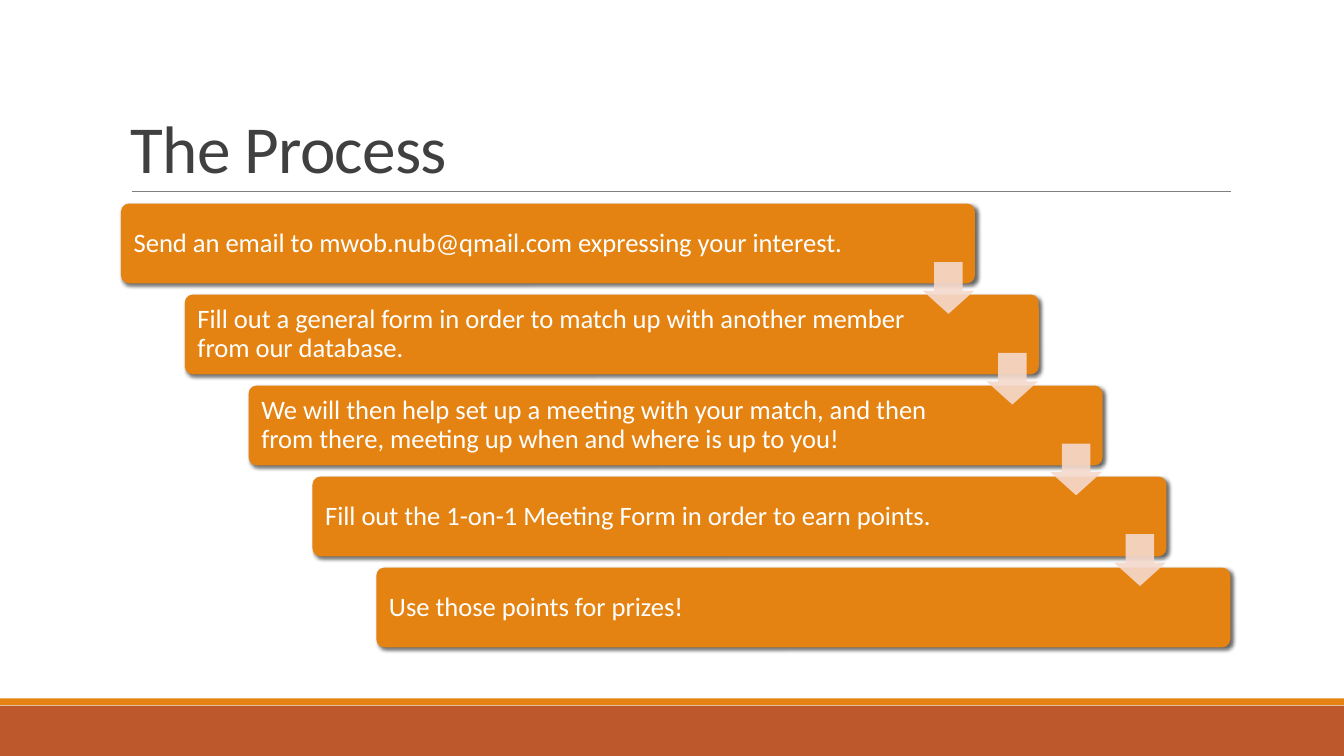
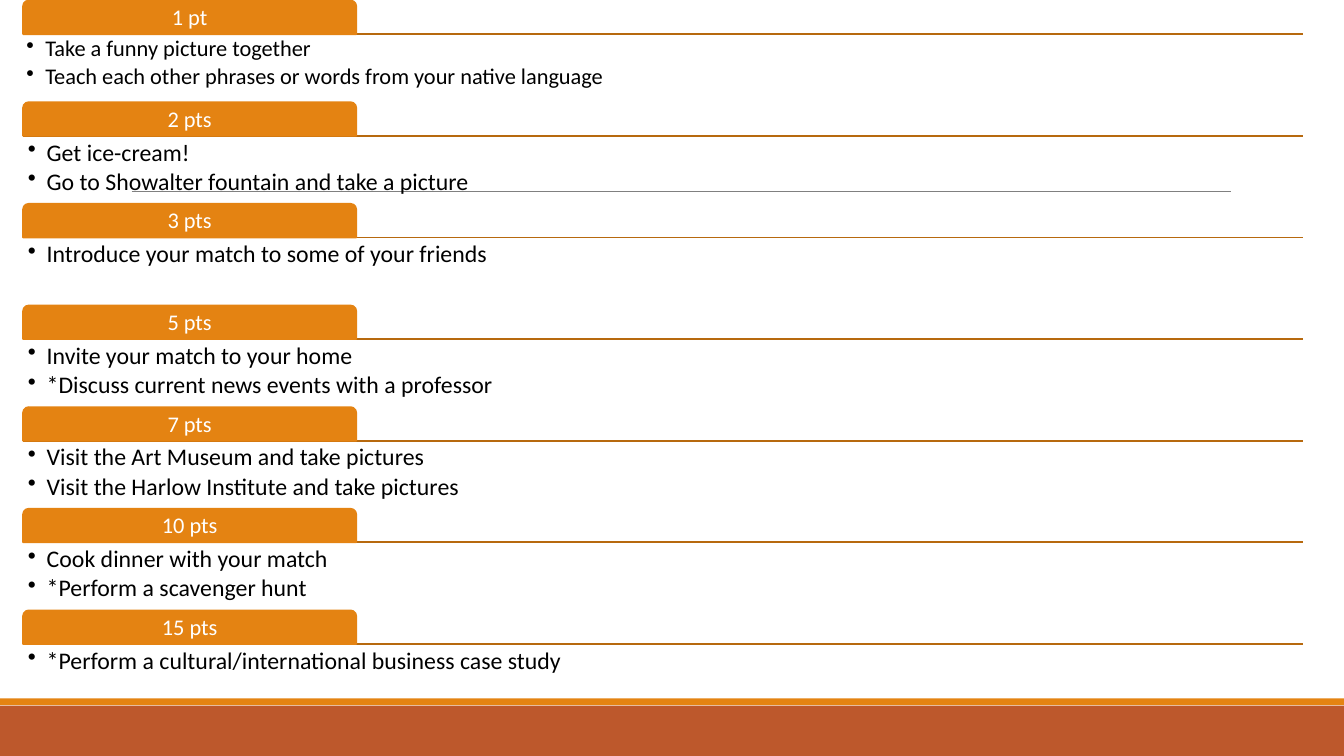
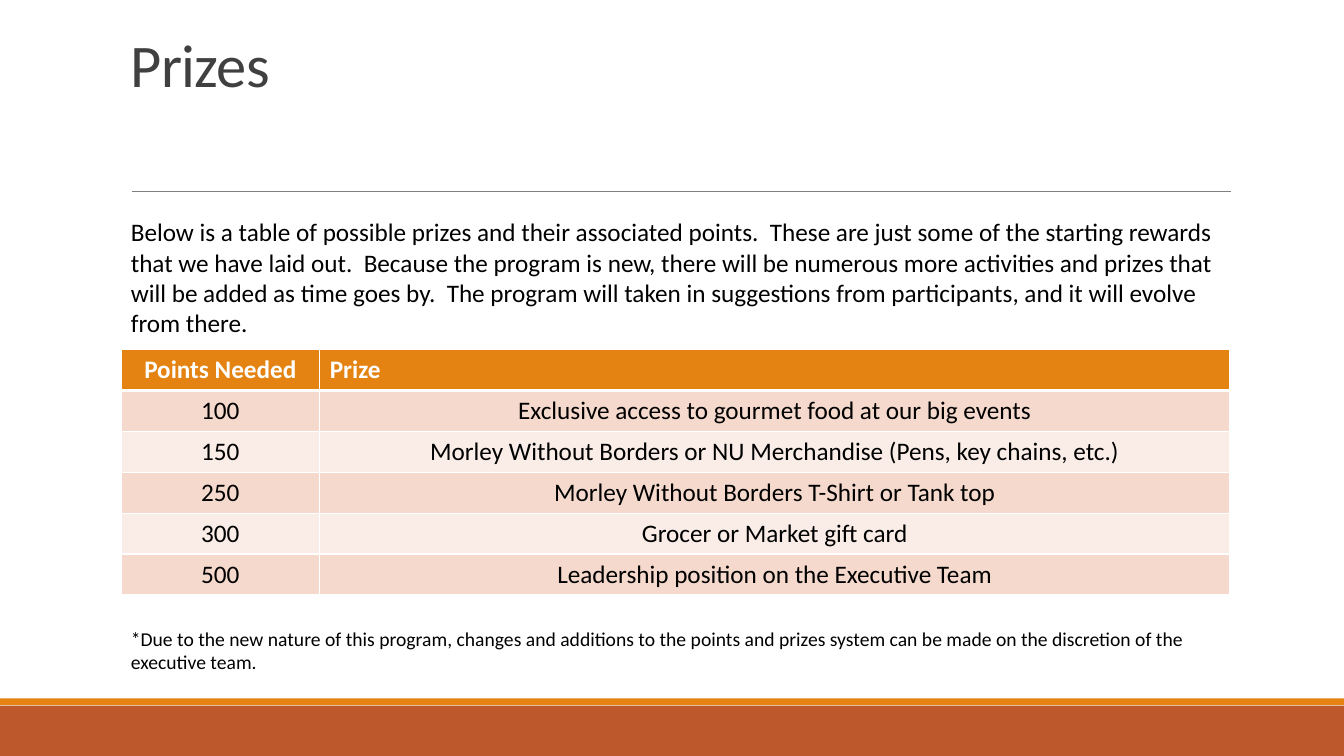
from lxml.etree import SubElement
from pptx import Presentation
from pptx.dml.color import RGBColor
from pptx.enum.shapes import MSO_CONNECTOR, MSO_SHAPE as SHAPE
from pptx.enum.text import MSO_ANCHOR as ANCHOR, PP_ALIGN as ALIGN
from pptx.oxml import parse_xml
from pptx.oxml.ns import nsdecls, qn
from pptx.util import Pt

ORANGE = RGBColor(0xE4, 0x83, 0x12)
RUST = RGBColor(0xBD, 0x58, 0x2C)
BROWN = RGBColor(0xB7, 0x69, 0x0E)
PEACH = RGBColor(0xF5, 0xD9, 0xCC)
PALE = RGBColor(0xFA, 0xED, 0xE7)
GRAY = RGBColor(0x80, 0x80, 0x80)
CHARCOAL = RGBColor(0x40, 0x40, 0x40)
BLACK = RGBColor(0, 0, 0)
WHITE = RGBColor(0xFF, 0xFF, 0xFF)
FONT = "Calibri"
MARGIN, CONTENT_WIDTH = 86.4, 792

STEPS = [
    "Send an email to mwob.nub@qmail.com expressing your interest.",
    "Fill out a general form in order to match up with another member from our database.",
    "We will then help set up a meeting with your match, and then from there, "
    "meeting up when and where is up to you!",
    "Fill out the 1-on-1 Meeting Form in order to earn points.",
    "Use those points for prizes!",
]
ACTIVITIES = [
    ("1 pt", ["Take a funny picture together",
              "Teach each other phrases or words from your native language"]),
    ("2 pts", ["Get ice-cream!", "Go to Showalter fountain and take a picture"]),
    ("3 pts", ["Introduce your match to some of your friends"]),
    ("5 pts", ["Invite your match to your home",
               "*Discuss current news events with a professor"]),
    ("7 pts", ["Visit the Art Museum and take pictures",
               "Visit the Harlow Institute and take pictures"]),
    ("10 pts", ["Cook dinner with your match", "*Perform a scavenger hunt"]),
    ("15 pts", ["*Perform a cultural/international business case study"]),
]
PRIZES = [
    ("Points Needed", "Prize"),
    ("100", "Exclusive access to gourmet food at our big events"),
    ("150", "Morley Without Borders or NU Merchandise (Pens, key chains, etc.)"),
    ("250", "Morley Without Borders T-Shirt or Tank top"),
    ("300", "Grocer or Market gift card"),
    ("500", "Leadership position on the Executive Team"),
]
INTRO = (
    "Below is a table of possible prizes and their associated points.  "
    "These are just some of the starting rewards that we have laid out.  "
    "Because the program is new, there will be numerous more activities and prizes "
    "that will be added as time goes by.  The program will taken in suggestions "
    "from participants, and it will evolve from there."
)
FOOTNOTE = (
    "*Due to the new nature of this program, changes and additions to the points and "
    "prizes system can be made on the discretion of the executive team."
)


def add_block(slide, kind, left, top, width, height, fill):
    shape = slide.shapes.add_shape(kind, Pt(left), Pt(top), Pt(width), Pt(height))
    shape.shadow.inherit = False
    shape.fill.solid()
    shape.fill.fore_color.rgb = fill
    shape.line.fill.background()
    return shape


def add_text(paragraph, text, size, color, spacing=1.0, align=ALIGN.LEFT):
    paragraph.line_spacing = spacing
    paragraph.alignment = align
    run = paragraph.add_run()
    run.text = text
    run.font.name = FONT
    run.font.size = Pt(size)
    run.font.color.rgb = color
    return run


presentation = Presentation()
presentation.slide_width, presentation.slide_height = Pt(960), Pt(540)
blank_layout = presentation.slide_layouts[6]

slides = []
for title, title_height, title_size in [("The Process", 114.5, 48), (None, 0, 0), ("Prizes", 52.6, 43.2)]:
    slide = presentation.slides.add_slide(blank_layout)
    slides.append(slide)
    add_block(slide, SHAPE.RECTANGLE, 0, 504, 960, 36, RUST)
    add_block(slide, SHAPE.RECTANGLE, 0, 498.8, 960, 4.8, ORANGE)
    rules = [(94, 136.8, 879, GRAY, 0.5)]
    if title is None:
        rules += [(16.5, 24.4 + 72.6 * row, 930.5, BROWN, 1.25) for row in range(len(ACTIVITIES))]
    for left, top, right, color, weight in rules:
        rule = slide.shapes.add_connector(MSO_CONNECTOR.STRAIGHT, Pt(left), Pt(top), Pt(right), Pt(top))
        rule.line.color.rgb = color
        rule.line.width = Pt(weight)
        SubElement(rule._element.spPr, qn("a:effectLst"))
    if title:
        title_box = slide.shapes.add_textbox(Pt(MARGIN), Pt(22.5), Pt(CONTENT_WIDTH), Pt(title_height))
        frame = title_box.text_frame
        frame.word_wrap = True
        frame.vertical_anchor = ANCHOR.BOTTOM
        run = add_text(frame.paragraphs[0], title, title_size, CHARCOAL, 0.85)
        run.font._element.set("spc", "-50")
process_slide, points_slide, prizes_slide = slides

for index, step in enumerate(STEPS):
    box = add_block(process_slide, SHAPE.ROUNDED_RECTANGLE,
                    MARGIN + 45.6 * index, 145.4 + 65 * index, 610, 57, ORANGE)
    box.adjustments[0] = 0.1
    box._element.spPr.find(qn("a:effectLst")).append(parse_xml(
        f'<a:outerShdw {nsdecls("a")} blurRad="38100" dist="25400" dir="2700000" rotWithShape="0">'
        '<a:srgbClr val="000000"><a:alpha val="60000"/></a:srgbClr></a:outerShdw>'))
    frame = box.text_frame
    frame.word_wrap = True
    frame.vertical_anchor = ANCHOR.MIDDLE
    frame.margin_left, frame.margin_right = Pt(7.4), Pt(89)
    add_text(frame.paragraphs[0], step, 19, WHITE, 0.9)

for index in range(len(STEPS) - 1):
    arrow = add_block(process_slide, SHAPE.DOWN_ARROW,
                      659 + 45.6 * index, 187.2 + 64.8 * index, 37, 37, PEACH)
    arrow.adjustments[0], arrow.adjustments[1] = 0.55, 0.45
    fill_color = arrow._element.spPr.find(qn("a:solidFill"))[0]
    SubElement(fill_color, qn("a:alpha")).set("val", "90000")

for row, (points, activities) in enumerate(ACTIVITIES):
    line_top = 24.4 + 72.6 * row
    tab = add_block(points_slide, SHAPE.ROUND_2_SAME_RECTANGLE, 16.5, line_top - 24, 238, 24, ORANGE)
    tab.adjustments[0], tab.adjustments[1] = 0.17, 0
    tab.line.color.rgb = ORANGE
    tab.line.width = Pt(1.25)
    frame = tab.text_frame
    frame.margin_top = frame.margin_bottom = Pt(2.4)
    frame.vertical_anchor = ANCHOR.MIDDLE
    add_text(frame.paragraphs[0], points, 16, WHITE, 0.9, ALIGN.CENTER)

    size, inset = (16, 2.4) if row == 0 else (17, 3.4)
    activity_box = points_slide.shapes.add_textbox(Pt(16.5), Pt(line_top), Pt(914), Pt(47.5))
    frame = activity_box.text_frame
    frame.word_wrap = True
    frame.margin_left = frame.margin_top = frame.margin_right = frame.margin_bottom = Pt(inset)
    for index, activity in enumerate(activities):
        paragraph = frame.add_paragraph() if index else frame.paragraphs[0]
        add_text(paragraph, activity, size, BLACK, 0.9)
        paragraph.space_after = Pt(0.15 * size)
        properties = paragraph._p.get_or_add_pPr()
        properties.set("marL", str(Pt(13.5)))
        properties.set("indent", str(Pt(-13.5)))
        SubElement(properties, qn("a:buChar")).set("char", "•")

table = prizes_slide.shapes.add_table(
    len(PRIZES), 2, Pt(MARGIN), Pt(249.8), Pt(CONTENT_WIDTH), Pt(29.2 * len(PRIZES))).table
table.columns[0].width, table.columns[1].width = Pt(142), Pt(650)
for row, values in enumerate(PRIZES):
    header = row == 0
    for column, value in enumerate(values):
        cell = table.cell(row, column)
        properties = cell._tc.get_or_add_tcPr()
        for side in "LRTB":
            thick = (side == "B" and row == 0) or (side == "T" and row == 1)
            properties.append(parse_xml(
                f'<a:ln{side} {nsdecls("a")} w="{Pt(3 if thick else 1)}">'
                f'<a:solidFill><a:srgbClr val="{WHITE}"/></a:solidFill></a:ln{side}>'))
        cell.fill.solid()
        cell.fill.fore_color.rgb = ORANGE if header else PEACH if row % 2 else PALE
        align = ALIGN.LEFT if header and column == 1 else ALIGN.CENTER
        run = add_text(cell.text_frame.paragraphs[0], value, 18, WHITE if header else BLACK, align=align)
        run.font.bold = header

for text, top, height, size in [(INTRO, 151.2, 94.3, 18), (FOOTNOTE, 444.2, 41, 14)]:
    note = prizes_slide.shapes.add_textbox(Pt(MARGIN), Pt(top), Pt(CONTENT_WIDTH), Pt(height))
    note.text_frame.word_wrap = True
    add_text(note.text_frame.paragraphs[0], text, size, BLACK)

presentation.save("out.pptx")
